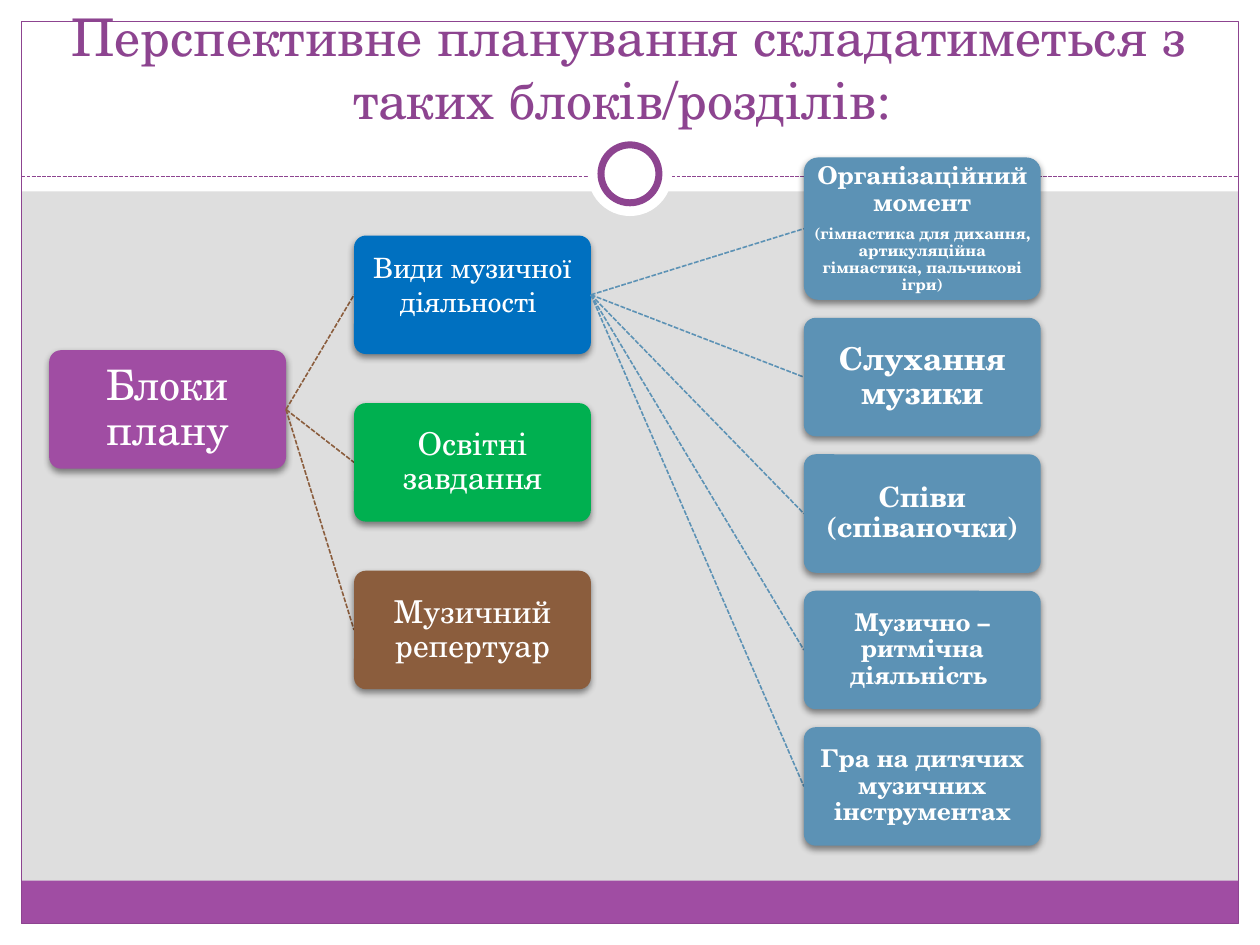
from lxml import etree
from pptx import Presentation
from pptx.dml.color import RGBColor
from pptx.enum.dml import MSO_LINE
from pptx.enum.shapes import MSO_CONNECTOR, MSO_SHAPE
from pptx.enum.text import MSO_ANCHOR, PP_ALIGN
from pptx.oxml.ns import qn
from pptx.util import Inches, Pt

RECT, OVAL, ROUNDED = MSO_SHAPE.RECTANGLE, MSO_SHAPE.OVAL, MSO_SHAPE.ROUNDED_RECTANGLE
STRAIGHT, SYS_DASH = MSO_CONNECTOR.STRAIGHT, MSO_LINE.SQUARE_DOT
MIDDLE, BOTTOM, CENTER = MSO_ANCHOR.MIDDLE, MSO_ANCHOR.BOTTOM, PP_ALIGN.CENTER

GREY = RGBColor(0xDE, 0xDE, 0xDE)
WHITE = RGBColor(0xFF, 0xFF, 0xFF)
PURPLE = RGBColor(0xA0, 0x4D, 0xA3)
DARK_PURPLE = RGBColor(0x8D, 0x44, 0x90)
BLUE = RGBColor(0x00, 0x70, 0xC0)
GREEN = RGBColor(0x00, 0xB0, 0x50)
BROWN = RGBColor(0x8B, 0x5D, 0x3D)
STEEL = RGBColor(0x5C, 0x92, 0xB5)
FONT = "TeX Gyre Schola"

# The slide is a grid of 100 columns by 75 rows of square cells
COLS, ROWS = 100, 75
CELL = Inches(10) / COLS
MARGIN = 1.7
NODE_W, NODE_H = 18.8, 9.4

# Tree content: (paragraphs as (text, size), fill, height, bottom inset)
ROOT = ([("Блоки плану", 24)], PURPLE, NODE_H, 0.35)
BRANCHES = [
    ([("Види музичної діяльності ", 16)], BLUE, NODE_H, 2),
    ([("Освітні завдання", 18)], GREEN, NODE_H, 0.35),
    ([("Музичний репертуар", 18)], BROWN, NODE_H, 0.35),
]
LEAVES = [
    ([("Організаційний момент", 14),
      ("(гімнастика для дихання, артикуляційна гімнастика, пальчикові ігри)", 9)],
     STEEL, 11.3, 0.35),
    ([("Слухання музики", 18)], STEEL, NODE_H, 0.35),
    ([("Співи (співаночки)", 16)], STEEL, NODE_H, 0.35),
    ([("Музично – ритмічна діяльність ", 14)], STEEL, NODE_H, 0.35),
    ([("Гра на дитячих музичних інструментах", 14)], STEEL, NODE_H, 0.35),
]


def cells(*values):
    return [round(v * CELL) for v in values]


def set_attrs(obj, values):
    for name, value in values.items():
        setattr(obj, name, value)


def add_box(s, kind, box, fill=None, line=None, width=0.75):
    sp = s.shapes.add_shape(kind, *cells(*box))
    sp.shadow.inherit = False
    if fill is None:
        sp.fill.background()
    else:
        sp.fill.solid()
        sp.fill.fore_color.rgb = fill
    if line is None:
        sp.line.fill.background()
    else:
        sp.line.color.rgb = line
        sp.line.width = Pt(width)
    return sp


def add_dashed(s, start, end, color, width):
    c = s.shapes.add_connector(STRAIGHT, *cells(*start, *end))
    c.line.color.rgb = color
    set_attrs(c.line, {"width": Pt(width), "dash_style": SYS_DASH})
    etree.SubElement(c._element.spPr, qn("a:effectLst"))


def add_shadow(sp):
    effects = sp._element.spPr.find(qn("a:effectLst"))
    shadow = etree.SubElement(effects, qn("a:outerShdw"), blurRad=str(Pt(4)),
                              dist=str(Pt(2)), dir="5400000", rotWithShape="0")
    color = etree.SubElement(shadow, qn("a:srgbClr"), val="000000")
    etree.SubElement(color, qn("a:alpha"), val="45000")


def write(p, text, size, color, bold=False):
    p.alignment = CENTER
    r = p.add_run()
    r.text = text
    set_attrs(r.font, {"name": FONT, "size": Pt(size), "bold": bold})
    r.font.color.rgb = color


def add_frame(s, box):
    """White margins and header, bottom bar, outline and the ring on the rule."""
    x, y, w, h = box
    rule = 14
    for band in ((0, ROWS - y, COLS, y), (0, 0, COLS, 15.2),
                 (0, 0, x, ROWS), (x + w, 0, x, ROWS)):
        add_box(s, RECT, band, WHITE)
    add_box(s, RECT, (x, y + h - 3.4, w, 3.4), PURPLE)
    add_box(s, RECT, box, line=DARK_PURPLE)
    add_dashed(s, (x, rule), (x + w, rule), DARK_PURPLE, 0.75)
    for d, line in ((6.7, None), (4.6, DARK_PURPLE)):
        add_box(s, OVAL, (COLS / 2 - d / 2, 13.8 - d / 2, d, d), WHITE, line, 4)


def add_title(s, box, text):
    title = s.shapes.title
    s.shapes._spTree.append(title._element)  # in front of the header band
    x, y, w, h = cells(*box)
    set_attrs(title, {"left": x, "top": y, "width": w, "height": h})
    tf = title.text_frame
    set_attrs(tf, {"word_wrap": True, "vertical_anchor": BOTTOM})
    write(tf.paragraphs[0], text, 29.7, DARK_PURPLE)


def add_node(s, box, paragraphs, fill, bottom, bold):
    sp = add_box(s, ROUNDED, box, fill)
    sp.adjustments[0] = 0.1
    add_shadow(sp)
    side, base = cells(0.35, bottom)
    tf = sp.text_frame
    set_attrs(tf, {"word_wrap": True, "vertical_anchor": MIDDLE,
                   "margin_left": side, "margin_right": side,
                   "margin_top": side, "margin_bottom": base})
    for i, (text, size) in enumerate(paragraphs):
        p = tf.add_paragraph() if i else tf.paragraphs[0]
        set_attrs(p, {"line_spacing": 1.0 if fill == BLUE else 0.9,
                      "space_after": Pt(round(size * 0.35))})
        write(p, text, size, WHITE, bold)


def add_column(s, x, y, gap, nodes, parent=None, link=None, bold=False):
    """Stack nodes downwards, joined to the parent; return their right ends."""
    ends = []
    for paragraphs, fill, h, bottom in nodes:
        mid = y + h / 2
        if parent:
            add_dashed(s, parent, (x, mid), link, 0.9)
        add_node(s, (x, y, NODE_W, h), paragraphs, fill, bottom, bold)
        ends.append((x + NODE_W, mid))
        y += h + gap
    return ends


def add_tree(s, box):
    x, y, w, _ = box
    root = add_column(s, x, y + 15.3, 0, [ROOT])[0]
    branches = add_column(s, x + 24.2, y + 6.2, 3.9, BRANCHES, root, BROWN)
    add_column(s, x + w - NODE_W, y, 1.43, LEAVES, branches[0], STEEL, True)


def main():
    prs = Presentation()
    prs.slide_width, prs.slide_height = cells(COLS, ROWS)
    s = prs.slides.add_slide(prs.slide_layouts[5])
    s.background.fill.solid()
    s.background.fill.fore_color.rgb = GREY
    add_frame(s, (MARGIN, MARGIN, COLS - 2 * MARGIN, ROWS - 2 * MARGIN))
    add_title(s, (3.3, 2.5, 93.3, 8.3),
              "Перспективне планування складатиметься з таких блоків/розділів: ")
    add_tree(s, (3.9, 12.5, 78.7, 54.6))
    prs.save("out.pptx")


if __name__ == "__main__":
    main()
